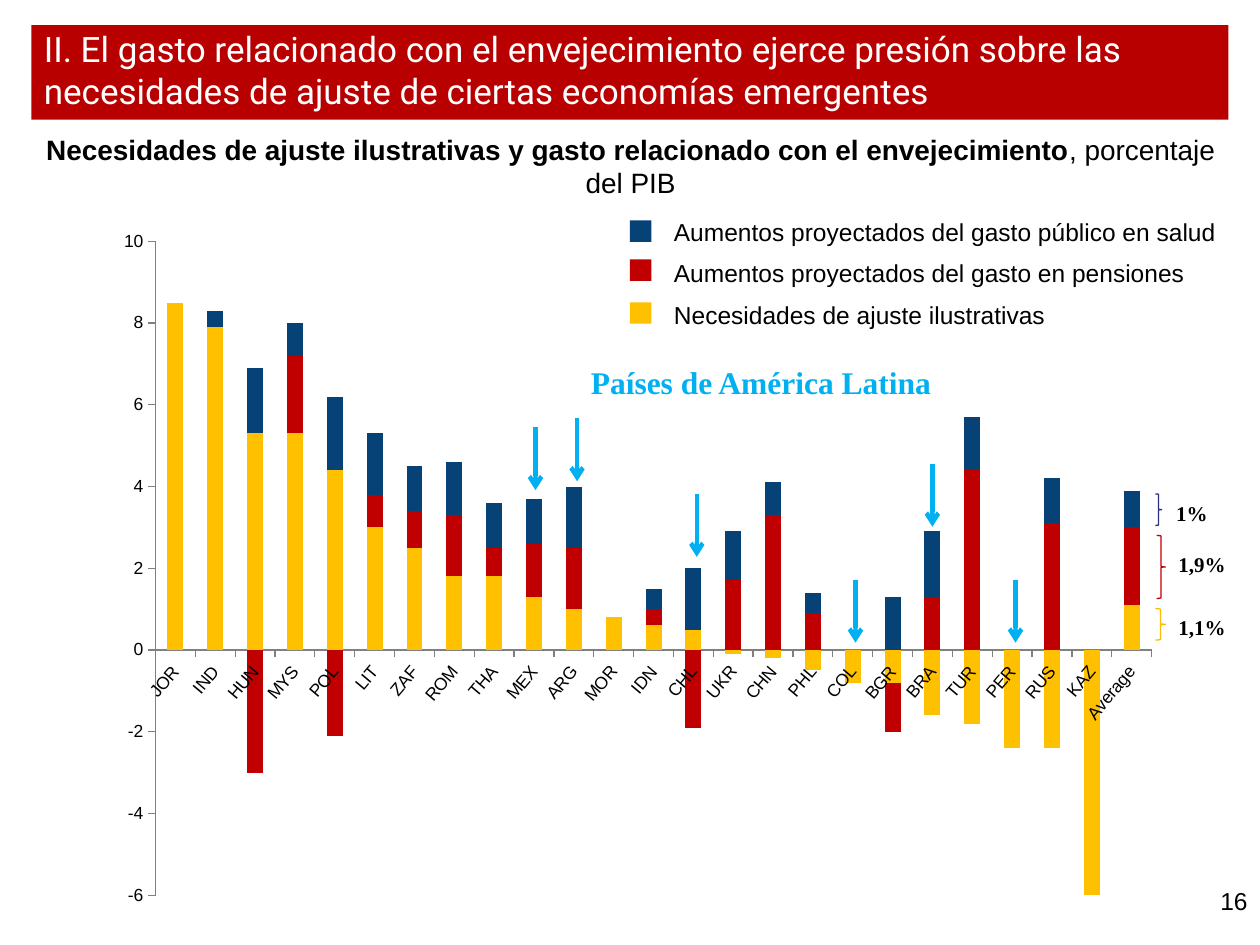
import pptx
import pptx.chart.data
import pptx.dml.color
import pptx.enum.chart
import pptx.enum.shapes
import pptx.enum.text
import pptx.oxml
import pptx.oxml.ns
import pptx.util
from lxml import etree

Inches, Pt = pptx.util.Inches, pptx.util.Pt
ALIGN = pptx.enum.text.PP_ALIGN
ANCHOR = pptx.enum.text.MSO_ANCHOR
SHAPE = pptx.enum.shapes.MSO_SHAPE
qn = pptx.oxml.ns.qn

COLORS = {
    "banner": "B80000", "white": "FFFFFF", "black": "000000", "axis": "808080",
    "adjustment": "FFC000", "pensions": "C00000", "health": "074277",
    "latin": "00B0F0", "brace_adjustment": "F9BC00", "brace_health": "2D2D8A",
}


def rgb(name):
    return pptx.dml.color.RGBColor.from_string(COLORS[name])


def add_text(text, box, size, font="Arial", color="black", bold=False,
             align=ALIGN.LEFT, anchor=ANCHOR.TOP, plain_tail=""):
    """Add a text box; plain_tail follows the text without bold."""
    frame = slide.shapes.add_textbox(*map(Inches, box)).text_frame
    frame.word_wrap = True
    frame.vertical_anchor = anchor
    paragraph = frame.paragraphs[0]
    paragraph.alignment = align
    for part, weight in ((text, bold), (plain_tail, False)):
        if part:
            run = paragraph.add_run()
            run.text = part
            run.font.size, run.font.name, run.font.bold = Pt(size), font, weight
            run.font.color.rgb = rgb(color)


presentation = pptx.Presentation()
presentation.slide_width, presentation.slide_height = Inches(10), Inches(7.5)
slide = presentation.slides.add_slide(presentation.slide_layouts[6])

# Title banner
banner = slide.shapes.add_shape(SHAPE.RECTANGLE, *map(Inches, (0.25, 0.2, 9.5, 0.75)))
banner.shadow.inherit = False
banner.fill.solid()
banner.fill.fore_color.rgb = rgb("banner")
banner.line.fill.background()
add_text("II. El gasto relacionado con el envejecimiento ejerce presión sobre las "
         "necesidades de ajuste de ciertas economías emergentes",
         (0.25, -0.07, 9.5, 1.25), 20, font="Roboto", color="white", anchor=ANCHOR.MIDDLE)

# Stacked columns by country
countries = ("JOR IND HUN MYS POL LIT ZAF ROM THA MEX ARG MOR IDN CHL UKR CHN PHL "
             "COL BGR BRA TUR PER RUS KAZ Average").split()
spending = {
    "adjustment": ("Necesidades de ajuste ilustrativas",
                   [8.5, 7.9, 5.3, 5.3, 4.4, 3, 2.5, 1.8, 1.8, 1.3, 1, 0.8, 0.6, 0.5, -0.1,
                    -0.2, -0.5, -0.8, -0.8, -1.6, -1.8, -2.4, -2.4, -6.1, 1.1]),
    "pensions": ("Aumentos proyectados del gasto en pensiones",
                 [None, 0, -3, 1.9, -2.1, 0.8, 0.9, 1.5, 0.7, 1.3, 1.5, None, 0.4, -1.9, 1.7,
                  3.3, 0.9, None, -1.2, 1.3, 4.4, None, 3.1, None, 1.9]),
    "health": ("Aumentos proyectados del gasto público en salud",
               [None, 0.4, 1.6, 0.8, 1.8, 1.5, 1.1, 1.3, 1.1, 1.1, 1.5, None, 0.5, 1.5, 1.2,
                0.8, 0.5, None, 1.3, 1.6, 1.3, None, 1.1, None, 0.9]),
}
data = pptx.chart.data.CategoryChartData()
data.categories = countries
for label, values in spending.values():
    data.add_series(label, values)
chart = slide.shapes.add_chart(
    pptx.enum.chart.XL_CHART_TYPE.COLUMN_STACKED,
    *map(Inches, (0.83, 1.75, 8.42, 5.5)), data).chart
chart.has_legend = chart.has_title = False
chart.font.size, chart.font.name = Pt(10), "Arial"
chart.font.color.rgb = rgb("black")

columns = chart.plots[0]
columns.gap_width, columns.overlap = 150, 100
columns.vary_by_categories = False
for series, color in zip(columns.series, spending):
    series.invert_if_negative = False
    series.format.fill.solid()
    series.format.fill.fore_color.rgb = rgb(color)

for axis in (chart.category_axis, chart.value_axis):
    axis.has_major_gridlines = False
    axis.major_tick_mark = pptx.enum.chart.XL_TICK_MARK.OUTSIDE
    axis.format.line.color.rgb = rgb("axis")
    axis.format.line.width = Pt(0.75)
    axis.tick_labels.font.size = Pt(10)
chart.value_axis.minimum_scale, chart.value_axis.maximum_scale = -6, 10
chart.value_axis.major_unit = 2
chart.value_axis.tick_labels.number_format = "0"
chart.value_axis.tick_labels.number_format_is_linked = False
country_labels = chart.category_axis._element.find(qn("c:txPr")).find(qn("a:bodyPr"))
country_labels.set("rot", "-3000000")
country_labels.set("vert", "horz")

plot_area = chart._chartSpace.chart.plotArea
for old_layout in plot_area.findall(qn("c:layout")):
    plot_area.remove(old_layout)
layout = etree.Element(qn("c:layout"))
manual = etree.SubElement(layout, qn("c:manualLayout"))
for tag, value in (("layoutTarget", "inner"), ("xMode", "edge"), ("yMode", "edge"),
                   ("x", "0.048"), ("y", "0.03"), ("w", "0.939"), ("h", "0.944")):
    etree.SubElement(manual, qn("c:" + tag)).set("val", value)
plot_area.insert(0, layout)

# Braces splitting the average column
for share, color, brace_box, label_left, label_top in (
        ("1,1%", "brace_adjustment", (9.17, 4.83, 0.08, 0.25), 9.25, 4.83),
        ("1,9%", "pensions", (9.18, 4.25, 0.07, 0.5), 9.25, 4.33),
        ("1%", "brace_health", (9.17, 3.92, 0.05, 0.25), 9.17, 3.92)):
    brace = slide.shapes.add_shape(SHAPE.RIGHT_BRACE, *map(Inches, brace_box))
    brace.shadow.inherit = False
    brace.fill.background()
    brace.line.color.rgb = rgb(color)
    brace.line.width = Pt(0.75)
    add_text(share, (label_left, label_top, 0.58, 0.3), 12, font="Times New Roman",
             bold=True, align=ALIGN.CENTER)

add_text("16", (7.67, 6.98, 2.33, 0.52), 14, align=ALIGN.RIGHT)
add_text("Necesidades de ajuste ilustrativas y gasto relacionado con el envejecimiento",
         (0.17, 1, 9.67, 0.64), 16, bold=True, align=ALIGN.CENTER,
         plain_tail=", porcentaje del PIB")

# Arrows over the Latin American countries: MEX, ARG, COL, CHL, PER, BRA
for x, top in ((4.25, 3.39), (4.58, 3.32), (6.79, 4.6), (5.53, 3.92), (8.06, 4.6), (7.4, 3.68)):
    arrow = slide.shapes.add_connector(
        pptx.enum.shapes.MSO_CONNECTOR.STRAIGHT, *map(Inches, (x, top, x, top + 0.5)))
    arrow.line.color.rgb = rgb("latin")
    arrow.line.width = Pt(2.5)
    etree.SubElement(arrow.line._get_or_add_ln(), qn("a:tailEnd")).set("type", "arrow")
    etree.SubElement(arrow._element.spPr, qn("a:effectLst"))
add_text("Países de América Latina", (4.58, 2.83, 2.92, 0.4), 18, font="Times New Roman",
         color="latin", bold=True, align=ALIGN.CENTER)

# Legend
for color, key_top, label_top in (("health", 1.75, 1.67), ("pensions", 2.06, 2),
                                  ("adjustment", 2.4, 2.33)):
    key = slide.shapes.add_shape(SHAPE.RECTANGLE, *map(Inches, (5, key_top, 0.17, 0.17)))
    key.shadow.inherit = False
    key.fill.solid()
    key.fill.fore_color.rgb = rgb(color)
    key.line.fill.background()
    add_text(spending[color][0], (5.25, label_top, 4.75, 0.34), 14)

presentation.save("out.pptx")
